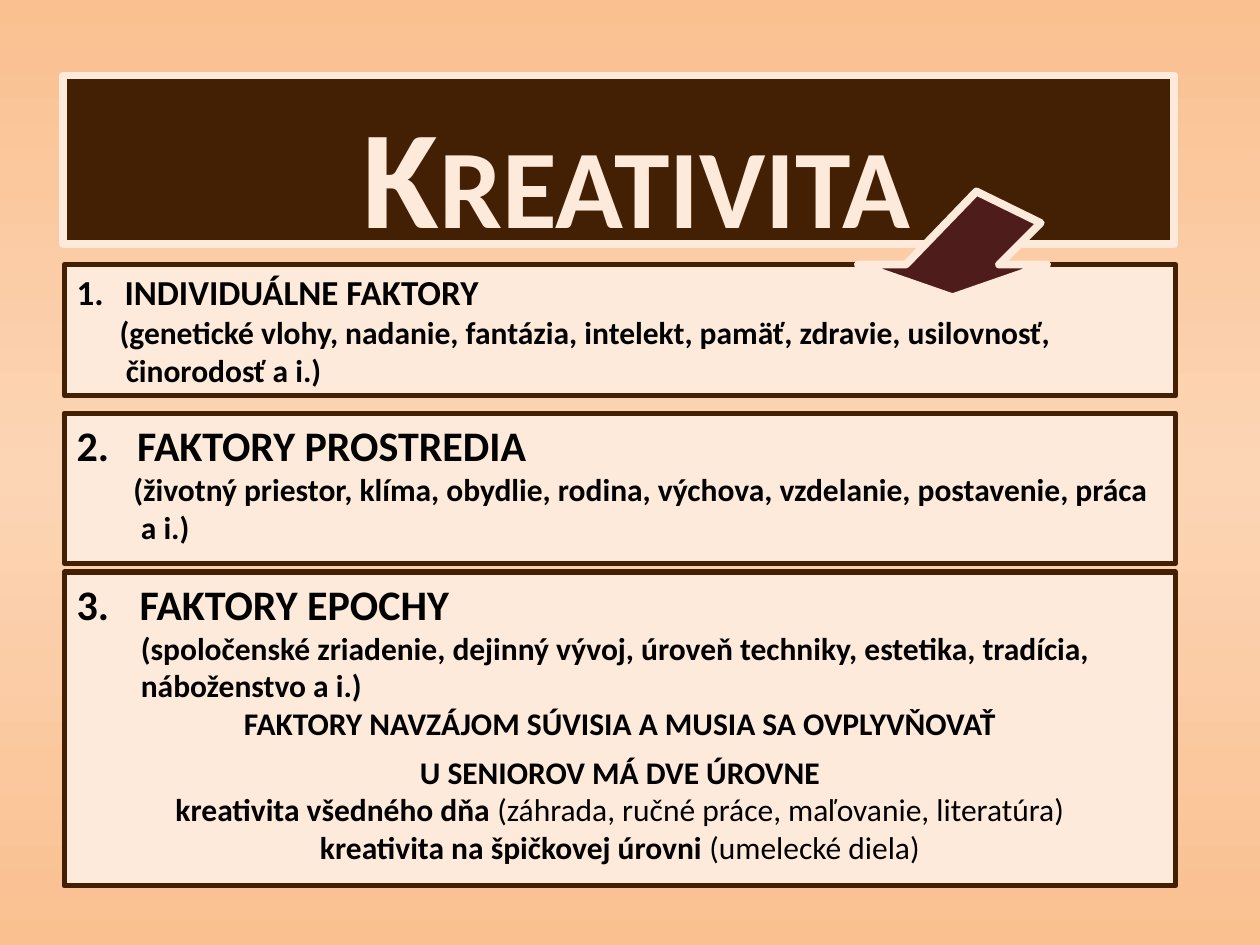
from copy import deepcopy

from lxml import etree
from pptx import Presentation
from pptx.dml.color import RGBColor
from pptx.enum import shapes, text
from pptx.oxml.ns import qn
from pptx.util import Inches, Pt

BROWN, CREAM, MAROON, BLACK = "432003", "FDEADA", "4D1C1B", "000000"
PEACH, LIGHT_PEACH = "FAC090", "FCD5B5"
FONT = "Calibri"
LEFT, WIDTH = 0.51, 8.82


def color(value):
    return RGBColor.from_string(value)


def paint_background(slide, colors):
    """Vertical gradient with evenly spaced stops."""
    fill = slide.background.fill
    fill.gradient()
    fill.gradient_angle = 270
    stop_list = slide.element.find(".//" + qn("a:gsLst"))
    while len(stop_list) < len(colors):
        stop_list.append(deepcopy(stop_list[0]))
    for index, (stop, value) in enumerate(zip(fill.gradient_stops, colors)):
        stop.position = index / (len(colors) - 1)
        stop.color.rgb = color(value)


def style(shape, fill, line, line_width):
    shape.shadow.inherit = False
    shape.fill.solid()
    shape.fill.fore_color.rgb = color(fill)
    shape.line.color.rgb = color(line)
    shape.line.width = Pt(line_width)


def add_box(slide, left, top, height, fill, line, line_width):
    box = slide.shapes.add_shape(
        shapes.MSO_SHAPE.RECTANGLE,
        Inches(left), Inches(top), Inches(WIDTH), Inches(height))
    style(box, fill, line, line_width)
    box.text_frame.word_wrap = True
    box.text_frame.vertical_anchor = text.MSO_ANCHOR.TOP
    return box


def format_run(run, size, value=BLACK, bold=True):
    run.font.name = FONT
    run.font.size = Pt(size)
    run.font.bold = bold
    run.font.color.rgb = color(value)


def set_indent(paragraph, margin, hanging=0):
    properties = paragraph._p.get_or_add_pPr()
    properties.set("marL", str(Inches(margin)))
    properties.set("indent", str(-Inches(hanging)))
    return properties


def add_title(slide, wording):
    box = add_box(slide, 0.5, 0.6, 1.34, BROWN, CREAM, 4.5)
    frame = box.text_frame
    frame.margin_left = Inches(0.38)
    frame.margin_top = Inches(0.1)
    frame.text = wording
    paragraph = frame.paragraphs[0]
    paragraph.alignment = text.PP_ALIGN.CENTER
    run = paragraph.runs[0]
    format_run(run, 80, CREAM)
    run._r.get_or_add_rPr().set("cap", "small")


def add_factor(slide, number, top, height, heading, size, indent, details):
    """Box with a numbered heading and (indent, wording) detail lines."""
    frame = add_box(slide, LEFT, top, height, CREAM, BROWN, 3).text_frame
    frame.text = heading
    paragraph = frame.paragraphs[0]
    paragraph.alignment = text.PP_ALIGN.LEFT
    properties = set_indent(paragraph, indent, indent)
    bullet_font = etree.SubElement(properties, qn("a:buFont"))
    bullet_font.set("typeface", "+mj-lt")
    numbering = etree.SubElement(properties, qn("a:buAutoNum"))
    numbering.set("type", "arabicPeriod")
    numbering.set("startAt", str(number))
    format_run(paragraph.runs[0], size)
    for margin, wording in details:
        paragraph = frame.add_paragraph()
        paragraph.text = wording
        paragraph.alignment = text.PP_ALIGN.LEFT
        set_indent(paragraph, margin)
        format_run(paragraph.runs[0], 18)
    return frame


def add_centered_line(frame, bold_part, plain_part="", space_before=0):
    paragraph = frame.add_paragraph()
    paragraph.alignment = text.PP_ALIGN.CENTER
    paragraph.space_before = Pt(space_before)
    for wording, bold in ((bold_part, True), (plain_part, False)):
        if wording:
            run = paragraph.add_run()
            run.text = wording
            format_run(run, 18, bold=bold)


def add_arrow(slide, points):
    corners = [(Inches(x), Inches(y)) for x, y in points]
    builder = slide.shapes.build_freeform(*corners[0])
    builder.add_line_segments(corners[1:], close=True)
    style(builder.convert_to_shape(), MAROON, CREAM, 4.5)


def main():
    presentation = Presentation()
    presentation.slide_width, presentation.slide_height = Inches(10), Inches(7.5)
    slide = presentation.slides.add_slide(presentation.slide_layouts[6])
    paint_background(slide, [PEACH, LIGHT_PEACH, PEACH])

    add_title(slide, "Kreativita")
    add_factor(slide, 1, 2.1, 1.04, "INDIVIDUÁLNE FAKTORY", 20, 0.38, [
        (0.34, "(genetické vlohy, nadanie, fantázia, intelekt, pamäť, zdravie, usilovnosť,"),
        (0.39, "činorodosť a i.)"),
    ])
    add_factor(slide, 2, 3.28, 1.19, "FAKTORY PROSTREDIA", 24, 0.48, [
        (0.45, "(životný priestor, klíma, obydlie, rodina, výchova, vzdelanie, postavenie, práca"),
        (0.51, "a i.)"),
    ])
    epoch = add_factor(slide, 3, 4.54, 2.49, "FAKTORY EPOCHY", 24, 0.5, [
        (0.51, "(spoločenské zriadenie, dejinný vývoj, úroveň techniky, estetika, tradícia,"),
        (0.51, "náboženstvo a i.)"),
    ])
    add_centered_line(epoch, "FAKTORY NAVZÁJOM SÚVISIA A MUSIA SA OVPLYVŇOVAŤ")
    add_centered_line(epoch, "U SENIOROV MÁ DVE ÚROVNE", space_before=6)
    add_centered_line(epoch, "kreativita všedného dňa ",
                      "(záhrada, ručné práce, maľovanie, literatúra)")
    add_centered_line(epoch, "kreativita na špičkovej úrovni ", "(umelecké diela)")

    add_arrow(slide, [(6.81, 2.1), (7.19, 2.1), (7.75, 1.52), (8.26, 1.77),
                      (7.93, 2.1), (8.31, 2.1), (7.56, 2.36)])
    presentation.save("out.pptx")


if __name__ == "__main__":
    main()
